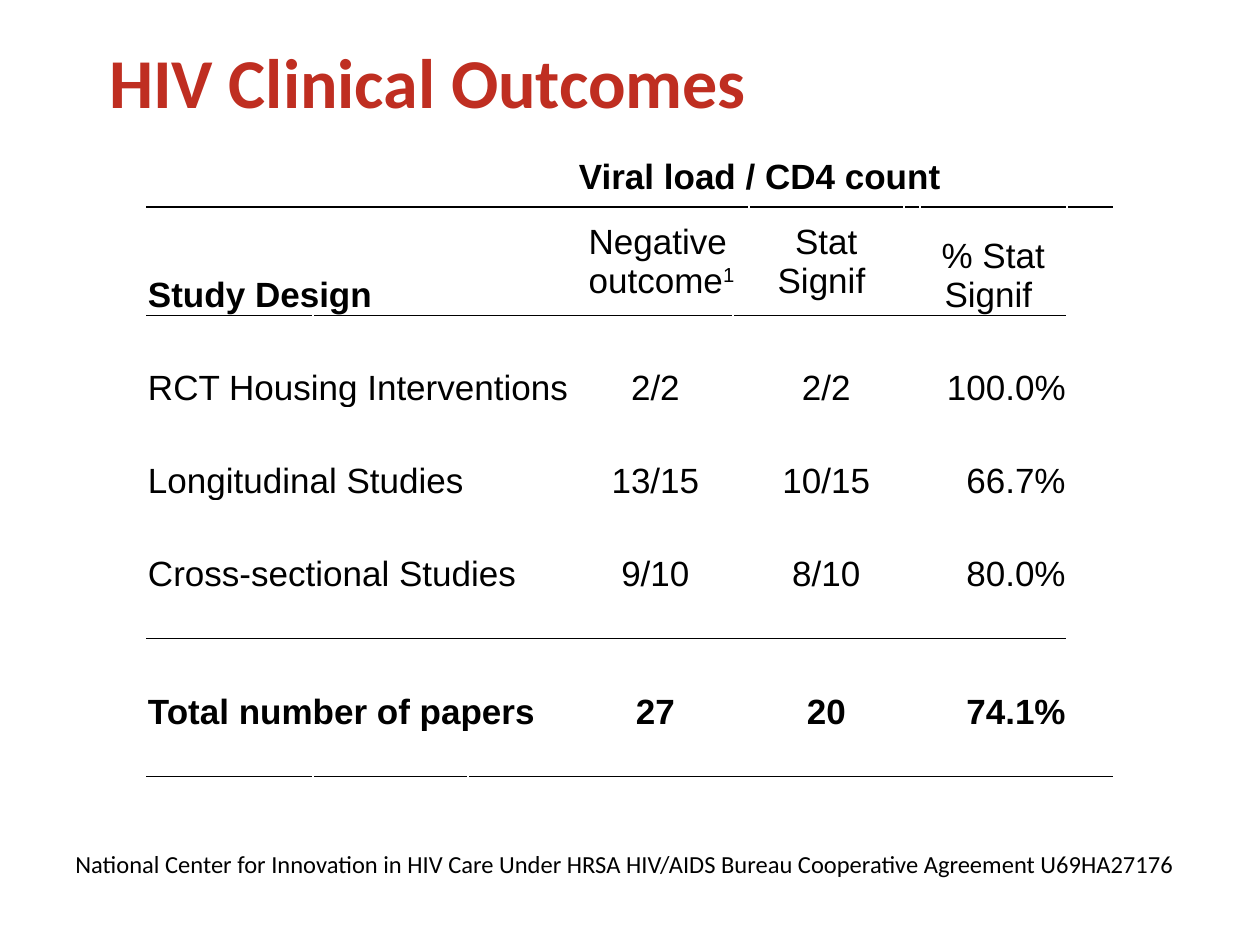
from lxml.etree import SubElement as Sub
from pptx import Presentation
from pptx.dml.color import RGBColor
from pptx.enum.text import MSO_ANCHOR as Anchor, MSO_AUTO_SIZE as Fit, PP_ALIGN as Align
from pptx.oxml import parse_xml
from pptx.oxml.ns import nsdecls, qn
from pptx.util import Pt

RED = RGBColor(0xBF, 0x2E, 0x21)
BLACK = RGBColor(0, 0, 0)
SCALE = 914400 / 126

COLS = [166, 155, 110, 155, 16, 155, 16, 147, 45]
ROWS = [60, 108] + [45, 48] * 3 + [45, 45, 48, 45]
RULES = [(11, 9, 0.5), (8, 8, 0.5), (1, 8, 0.5), (0, 9, 1)]
DATA = [
    (3, "RCT Housing Interventions", "2/2", "2/2", "100.0%"),
    (5, "Longitudinal Studies", "13/15", "10/15", "66.7%"),
    (7, "Cross-sectional Studies", "9/10", "8/10", "80.0%"),
    (10, "Total number of papers", "27", "20", "74.1%"),
]


def px(n):
    return round(n * SCALE)


class Deck:
    def __init__(self):
        self.prs = Presentation()
        self.prs.slide_width, self.prs.slide_height = px(1260), px(945)
        self.slide = self.prs.slides.add_slide(self.prs.slide_layouts[5])

    def style(self, frame, size, name, color=BLACK, bold=False, align=Align.LEFT):
        for para in frame.paragraphs:
            para.alignment = align
            for run in para.runs:
                font = run.font
                font.size, font.name, font.bold = Pt(size), name, bold
                font.color.rgb = color

    def place(self, shape, x, y, w, h):
        shape.left, shape.top, shape.width, shape.height = map(px, (x, y, w, h))
        frame = shape.text_frame
        frame.word_wrap = True
        frame.auto_size = Fit.NONE
        frame.vertical_anchor = Anchor.BOTTOM
        return frame

    def title(self, text, box):
        frame = self.place(self.slide.shapes.title, *box)
        frame.margin_left = px(60)
        frame.text = text
        self.style(frame, 40, "Calibri", RED, True)

    def note(self, text, box):
        shape = self.slide.shapes.add_textbox(0, 0, 0, 0)
        frame = self.place(shape, *box)
        frame.text = text
        self.style(frame, 14, "Calibri")

    def grid(self, x, y, cols, rows):
        shape = self.slide.shapes.add_table(
            len(rows), len(cols), px(x), px(y), px(sum(cols)), px(sum(rows)))
        self.table = shape.table
        self.table.first_row = self.table.horz_banding = False
        for col, w in zip(self.table.columns, cols):
            col.width = px(w)
        for row, h in zip(self.table.rows, rows):
            row.height = px(h)
        for cell in self.table.iter_cells():
            cell.fill.background()
            cell.margin_left = cell.margin_right = cell.margin_top = px(1)
            cell.margin_bottom = 0

    def cell(self, row, col, text, align=Align.LEFT, bold=False,
             anchor=Anchor.BOTTOM, span=1, sup=""):
        cell = self.table.cell(row, col)
        if span > 1:
            cell.merge(self.table.cell(row, col + span - 1))
        cell.vertical_anchor = anchor
        cell.text_frame.text = text
        if sup:
            run = cell.text_frame.paragraphs[0].add_run()
            run.text = sup
            run._r.get_or_add_rPr().set("baseline", "30000")
        self.style(cell.text_frame, 20, "Arial", bold=bold, align=align)

    def edge(self, cell, tag, weight):
        line = parse_xml(f'<a:{tag} {nsdecls("a")} w="{Pt(weight)}"/>')
        fill = Sub(line, qn("a:solidFill"))
        Sub(fill, qn("a:srgbClr")).set("val", str(BLACK))
        cell._tc.get_or_add_tcPr().insert(0, line)

    def rule(self, row, count, weight):
        for col in range(count):
            self.edge(self.table.cell(row, col), "lnB", weight)
            if row + 1 < len(self.table.rows):
                self.edge(self.table.cell(row + 1, col), "lnT", weight)


def main():
    deck = Deck()
    deck.note("National Center for Innovation in HIV Care Under HRSA HIV/AIDS "
              "Bureau Cooperative Agreement U69HA27176", (63, 804, 1134, 81))
    deck.grid(147, 147, COLS, ROWS)
    mid = Anchor.MIDDLE
    deck.cell(0, 3, "Viral load / CD4 count", bold=True, anchor=mid, span=6)
    deck.cell(1, 0, "Study Design", bold=True, span=2)
    deck.cell(1, 3, " Negative \v outcome", anchor=mid, span=2, sup="1")
    deck.cell(1, 5, "Stat\nSignif ", Align.CENTER, anchor=mid)
    deck.cell(1, 7, "% Stat\nSignif ", Align.CENTER)
    for row, name, neg, stat, rate in DATA:
        bold = name.startswith("Total")
        deck.cell(row, 0, name, bold=bold, span=3)
        deck.cell(row, 3, neg, Align.CENTER, bold)
        deck.cell(row, 5, stat, Align.CENTER, bold)
        deck.cell(row, 7, rate, Align.RIGHT, bold)
    for rule in RULES:
        deck.rule(*rule)
    deck.title("HIV Clinical Outcomes", (49, 16, 1134, 113))
    deck.prs.save("out.pptx")


if __name__ == "__main__":
    main()
